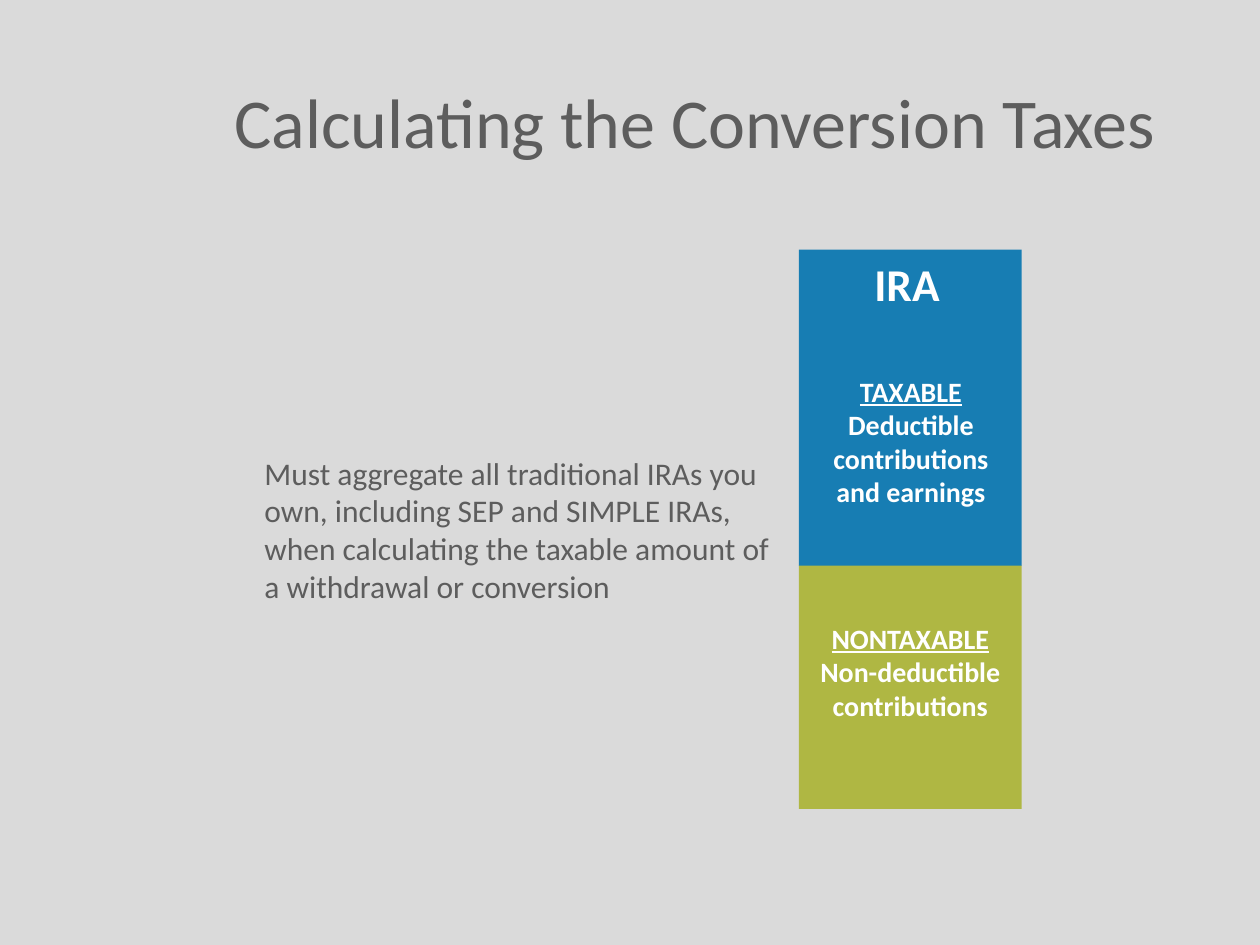
from pptx import Presentation
from pptx.dml.color import RGBColor
from pptx.enum.shapes import MSO_SHAPE
from pptx.enum.text import MSO_ANCHOR, PP_ALIGN
from pptx.util import Pt

COLORS = {"back": "DADADA", "text": "5D5D5D", "blue": "177DB3",
          "green": "AFB743", "white": "FFFFFF"}


def color(name):
    return RGBColor.from_string(COLORS[name])


class Page:
    face = "Calibri"

    def __init__(self, deck):
        self.slide = deck.slides.add_slide(deck.slide_layouts[5])
        fill = self.slide.background.fill
        fill.solid()
        fill.fore_color.rgb = color("back")

    def place(self, shape, box):
        shape.left, shape.top, shape.width, shape.height = map(Pt, box)

    def style(self, para, size, hue, bold=False, align=PP_ALIGN.LEFT):
        para.alignment = align
        font = para.font
        font.name, font.size, font.bold = self.face, Pt(size), bold
        font.color.rgb = color(hue)

    def title(self, text, box):
        shape = self.slide.shapes.title
        self.place(shape, box)
        frame = shape.text_frame
        frame.text = text
        frame.vertical_anchor = MSO_ANCHOR.MIDDLE
        self.style(frame.paragraphs[0], 40, "text")

    def text(self, box, size, hue, text="", **look):
        shape = self.slide.shapes.add_textbox(*map(Pt, box))
        shape.text_frame.word_wrap = True
        para = shape.text_frame.paragraphs[0]
        if text:
            para.add_run().text = text
        self.style(para, size, hue, **look)
        return para

    def label(self, box, head, body):
        """Add a centred label whose first words are underlined."""
        para = self.text(box, 16, "white", bold=True, align=PP_ALIGN.CENTER)
        run = para.add_run()
        run.text = head + " "
        run.font.underline = True
        para.add_run().text = body

    def block(self, box, hue):
        shape = self.slide.shapes.add_shape(MSO_SHAPE.RECTANGLE, *map(Pt, box))
        shape.shadow.inherit = False
        shape.fill.solid()
        shape.fill.fore_color.rgb = color(hue)
        shape.line.fill.background()


def main():
    deck = Presentation()
    deck.slide_width, deck.slide_height = Pt(720), Pt(540)
    page = Page(deck)
    page.title("Calculating the Conversion Taxes", (126.7, 41.8, 573, 54))
    page.text((144, 255.6, 306, 94.3), 18, "text",
              "Must aggregate all traditional IRAs you own, including SEP and "
              "SIMPLE IRAs, when calculating the taxable amount of a "
              "withdrawal or conversion")

    left, top, wide = 456.5, 142.6, 127.4
    tall, low = 180.7, 139
    page.block((left, top, wide, tall), "blue")
    page.block((left, top + tall, wide, low), "green")
    page.text((492.5, top, 65.5, 38.9), 26, "white", "IRA", bold=True)
    page.label((464.4, 210.2, 112.3, 85), "TAXABLE",
               "Deductible contributions and earnings")
    page.label((455.8, 351.4, 128.8, 66), "NONTAXABLE",
               "Non-deductible contributions")
    deck.save("out.pptx")


if __name__ == "__main__":
    main()
